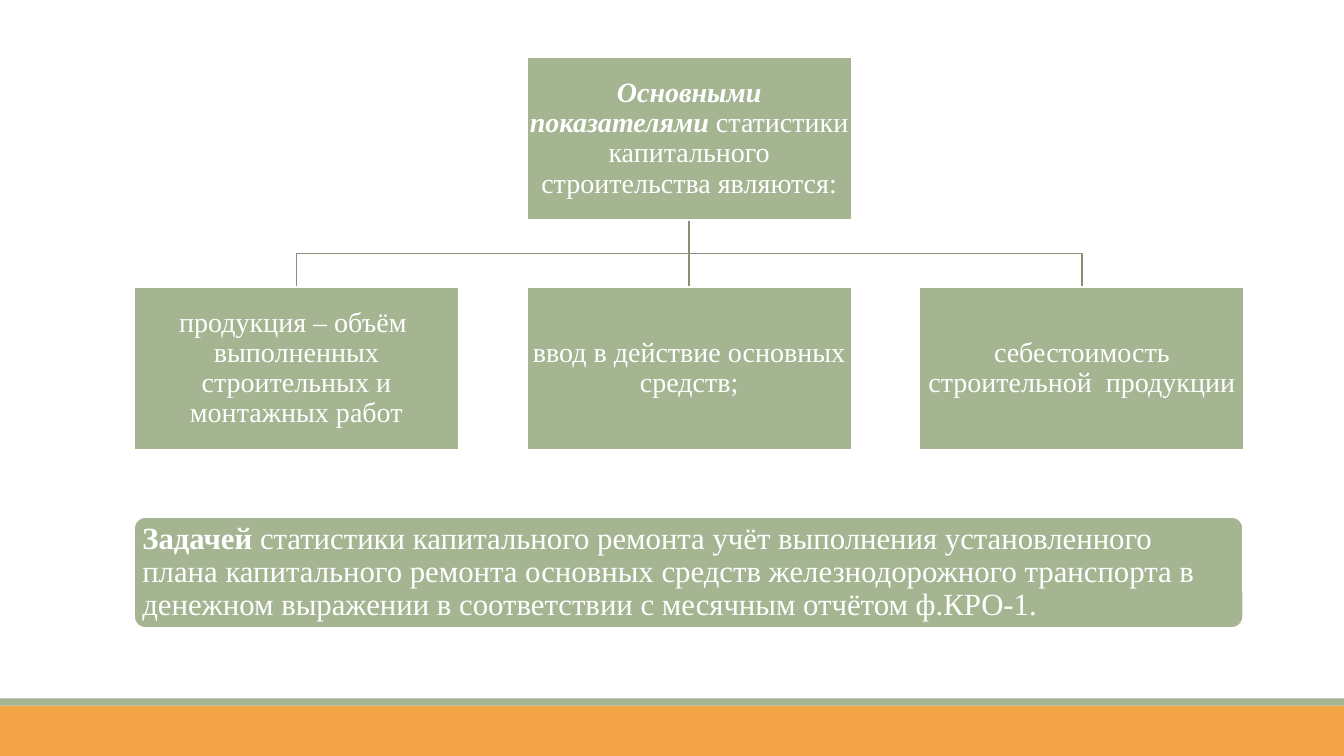
from pptx import Presentation
from pptx.dml.color import RGBColor
from pptx.enum import shapes, text
from pptx.oxml import ns
from pptx.util import Inches, Pt
from lxml import etree

WHITE = RGBColor(0xFF, 0xFF, 0xFF)
SAGE = RGBColor(0xA5, 0xB5, 0x92)
OLIVE = RGBColor(0x84, 0x91, 0x75)
ORANGE = RGBColor(0xF3, 0xA4, 0x47)

RECT = shapes.MSO_SHAPE.RECTANGLE
ROUNDED = shapes.MSO_SHAPE.ROUNDED_RECTANGLE

BOX_W, BOX_H = 3.22, 1.61
LEFT, PITCH = 1.33, 3.895
ROOT_TOP, CHILD_TOP = 0.57, 2.85
ROOT_BOTTOM = ROOT_TOP + BOX_H


class Board:
    """Holds the slide and the common look of its elements."""

    font = "Times New Roman"
    line_width = Pt(1.25)

    def __init__(self, slide):
        self.items = slide.shapes

    def panel(self, kind, left, top, width, height, fill, outline=None):
        panel = self.items.add_shape(
            kind, Inches(left), Inches(top), Inches(width), Inches(height))
        panel.shadow.inherit = False
        panel.fill.solid()
        panel.fill.fore_color.rgb = fill
        if outline is None:
            panel.line.fill.background()
        else:
            self.stroke(panel.line, outline)
        return panel

    def stroke(self, line, color):
        line.color.rgb = color
        line.width = self.line_width

    def label(self, panel, runs, size, align, inset_x, inset_y):
        """Fill a panel with (wording, bold, italic) runs."""
        frame = panel.text_frame
        frame.word_wrap = True
        frame.vertical_anchor = text.MSO_ANCHOR.MIDDLE
        frame.margin_left = frame.margin_right = Inches(inset_x)
        frame.margin_top = frame.margin_bottom = Inches(inset_y)
        paragraph = frame.paragraphs[0]
        paragraph.alignment = align
        paragraph.line_spacing = 0.9
        for wording, bold, italic in runs:
            run = paragraph.add_run()
            run.text = wording
            run.font.name = self.font
            run.font.size = Pt(size)
            run.font.bold = bold
            run.font.italic = italic
            run.font.color.rgb = WHITE

    def chart_box(self, left, top, runs):
        box = self.panel(RECT, left, top, BOX_W, BOX_H, SAGE, WHITE)
        self.label(box, runs, 20, text.PP_ALIGN.CENTER, 0.01, 0.01)

    def straight_link(self, x, top, bottom):
        link = self.items.add_connector(
            shapes.MSO_CONNECTOR.STRAIGHT,
            Inches(x), Inches(top), Inches(x), Inches(bottom))
        self.stroke(link.line, OLIVE)
        etree.SubElement(link._element.spPr, ns.qn("a:effectLst"))

    def elbow_link(self, x_from, top, x_to, bottom):
        middle = (top + bottom) / 2
        builder = self.items.build_freeform(Inches(x_from), Inches(top))
        corners = [(x_from, middle), (x_to, middle), (x_to, bottom)]
        builder.add_line_segments(
            [(Inches(x), Inches(y)) for x, y in corners], close=False)
        link = builder.convert_to_shape()
        link.shadow.inherit = False
        link.fill.background()
        self.stroke(link.line, OLIVE)


def main():
    deck = Presentation()
    deck.slide_width, deck.slide_height = Inches(13.33), Inches(7.5)
    board = Board(deck.slides.add_slide(deck.slide_layouts[6]))

    board.panel(RECT, 0, 7, 13.33, 0.5, ORANGE)
    board.panel(RECT, 0, 6.93, 13.33, 0.07, SAGE)

    indicators = [
        "продукция – объём  выполненных строительных и монтажных работ",
        "ввод в действие основных средств;",
        "себестоимость строительной  продукции",
    ]
    lefts = [LEFT + PITCH * column for column in range(len(indicators))]
    centers = [left + BOX_W / 2 for left in lefts]
    first, root, last = centers

    for end in (last, first):
        board.elbow_link(root, ROOT_BOTTOM, end, CHILD_TOP)
    board.straight_link(root, ROOT_BOTTOM, CHILD_TOP)

    board.chart_box(lefts[1], ROOT_TOP, [
        ("Основными показателями ", True, True),
        ("статистики капитального строительства являются:", False, False),
    ])
    for left, indicator in zip(lefts, indicators):
        board.chart_box(left, CHILD_TOP, [(indicator, False, False)])

    task = board.panel(ROUNDED, LEFT, 5.13, 11, 1.1, SAGE, WHITE)
    task.adjustments[0] = 0.1
    board.label(task, [
        ("Задачей", True, False),
        (" статистики капитального ремонта учёт выполнения установленного "
         "плана капитального ремонта основных средств железнодорожного "
         "транспорта в денежном выражении в соответствии с месячным отчётом "
         "ф.КРО-1.", False, False),
    ], 22, text.PP_ALIGN.LEFT, 0.05, 0.03)

    deck.save("out.pptx")


if __name__ == "__main__":
    main()
